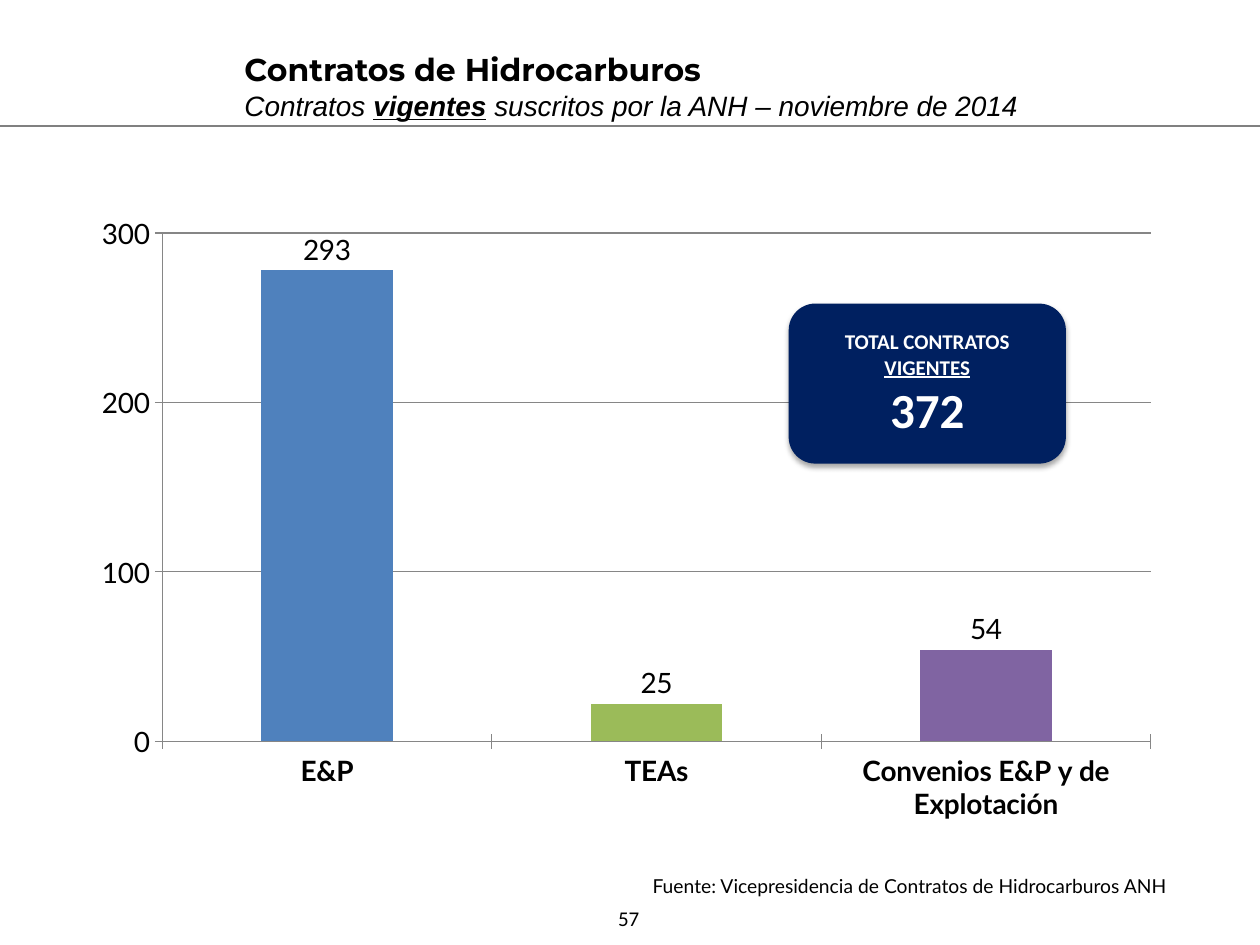
from lxml.etree import SubElement
from pptx import Presentation
from pptx.chart.data import CategoryChartData
from pptx.dml.color import RGBColor
from pptx.enum.chart import XL_CHART_TYPE, XL_LABEL_POSITION, XL_TICK_MARK
from pptx.enum.shapes import MSO_CONNECTOR, MSO_SHAPE
from pptx.enum.text import MSO_ANCHOR, MSO_AUTO_SIZE, PP_ALIGN
from pptx.oxml import parse_xml
from pptx.oxml.ns import nsdecls, qn
from pptx.util import Inches, Pt

THEME = {
    "heading": "Montserrat", "subtitle": "Arial", "body": "Calibri", "chart": "Lato",
    "ink": "000000", "white": "FFFFFF", "navy": "002060", "rule": "808080", "grid": "868686",
    "title_size": 18, "subtitle_size": 16, "chart_size": 16,
    "small": 12, "source_size": 11, "total_size": 28,
}

SUBTITLE = [("Contratos ", False), ("vigentes", True),
            (" suscritos por la ANH – noviembre de 2014", False)]
CONTRACTS = [
    ("E&P", 278, "293", "4F81BD"),
    ("TEAs", 22, "25", "9BBB59"),
    ("Convenios E&P y de Explotación", 54, None, "8064A2"),
]
PLOT = {"x": 0.076, "y": 0.071, "w": 0.906, "h": 0.776}
SOURCE = "Fuente: Vicepresidencia de Contratos de Hidrocarburos ANH"


def color(name):
    return RGBColor.from_string(THEME.get(name, name))


def style(font, face, size, ink="ink", bold=False, italic=False, underline=False):
    font.name, font.size = THEME[face], Pt(THEME[size])
    font.bold, font.italic, font.underline = bold, italic, underline
    font.color.rgb = color(ink)


def add_span(para, text, *look, **flags):
    span = para.add_run()
    span.text = text
    style(span.font, *look, **flags)


def add_rule(page):
    rule = page.shapes.add_connector(MSO_CONNECTOR.STRAIGHT, 0, Inches(1), Inches(10), Inches(1))
    rule.line.color.rgb = color("rule")
    rule.line.width = Pt(0.75)
    SubElement(rule._element.spPr, qn("a:effectLst"))


def add_title(page):
    title = page.shapes.title
    title.left, title.top, title.width, title.height = map(Inches, (1.84, 0.35, 6.46, 0.67))
    frame = title.text_frame
    frame.auto_size = MSO_AUTO_SIZE.NONE
    frame.vertical_anchor = MSO_ANCHOR.TOP
    heading, subtitle = frame.paragraphs[0], frame.add_paragraph()
    heading.alignment = subtitle.alignment = PP_ALIGN.LEFT
    add_span(heading, "Contratos de Hidrocarburos", "heading", "title_size", bold=True)
    for text, strong in SUBTITLE:
        add_span(subtitle, text, "subtitle", "subtitle_size",
                 bold=strong, italic=True, underline=strong)


def place_plot(chart):
    area = chart._chartSpace.chart.plotArea
    for old in area.findall(qn("c:layout")):
        area.remove(old)
    sizes = "".join(f'<c:{key} val="{value}"/>' for key, value in PLOT.items())
    area.insert(0, parse_xml(
        f'<c:layout {nsdecls("c")}><c:manualLayout><c:layoutTarget val="inner"/>'
        f'<c:xMode val="edge"/><c:yMode val="edge"/>{sizes}</c:manualLayout></c:layout>'))


def add_contract_chart(page):
    data = CategoryChartData()
    data.categories = [name for name, *_ in CONTRACTS]
    data.add_series("Contratos", [value for _, value, *_ in CONTRACTS])
    chart = page.shapes.add_chart(
        XL_CHART_TYPE.COLUMN_CLUSTERED, *map(Inches, (0.63, 1.48, 8.66, 5.2)), data).chart
    chart.has_legend = chart.has_title = False
    style(chart.font, "chart", "chart_size")
    place_plot(chart)

    values, categories = chart.value_axis, chart.category_axis
    values.minimum_scale, values.maximum_scale, values.major_unit = 0, 300, 100
    values.has_major_gridlines = True
    style(categories.tick_labels.font, "chart", "chart_size", bold=True)
    for axis in (values, categories):
        axis.major_tick_mark = XL_TICK_MARK.CROSS
    for part in (values, categories, values.major_gridlines):
        part.format.line.color.rgb = color("grid")
        part.format.line.width = Pt(0.75)

    plot = chart.plots[0]
    plot.gap_width = 150
    plot.vary_by_categories = False
    series = plot.series[0]
    series.format.fill.solid()
    series.format.fill.fore_color.rgb = color(CONTRACTS[0][3])
    labels = series.data_labels
    labels.show_value = True
    labels.position = XL_LABEL_POSITION.OUTSIDE_END
    style(labels.font, "chart", "chart_size")
    for index, (_, _, caption, fill) in enumerate(CONTRACTS):
        point = series.points[index]
        point.format.fill.solid()
        point.format.fill.fore_color.rgb = color(fill)
        if caption:
            para = point.data_label.text_frame.paragraphs[0]
            add_span(para, caption, "chart", "chart_size")
            point.data_label.position = XL_LABEL_POSITION.OUTSIDE_END


def add_total(page):
    box = page.shapes.add_shape(MSO_SHAPE.ROUNDED_RECTANGLE,
                                *map(Inches, (6.26, 2.41, 2.2, 1.27)))
    box.fill.solid()
    box.fill.fore_color.rgb = color("navy")
    box.line.fill.background()
    box.shadow.inherit = False
    effects = box._element.spPr.find(qn("a:effectLst"))
    effects.append(parse_xml(
        f'<a:outerShdw {nsdecls("a")} blurRad="{Pt(3.1)}" dist="{Pt(1.8)}" dir="5400000" '
        'rotWithShape="0"><a:srgbClr val="000000"><a:alpha val="35000"/></a:srgbClr>'
        '</a:outerShdw>'))
    frame = box.text_frame
    frame.word_wrap = True
    frame.vertical_anchor = MSO_ANCHOR.MIDDLE
    caption, total = frame.paragraphs[0], frame.add_paragraph()
    caption.alignment = total.alignment = PP_ALIGN.CENTER
    add_span(caption, "TOTAL CONTRATOS ", "body", "small", "white", bold=True)
    add_span(caption, "VIGENTES", "body", "small", "white", bold=True, underline=True)
    add_span(total, "372", "body", "total_size", "white", bold=True)


def add_note(page, place, text, face, size, alignment, anchor):
    frame = page.shapes.add_textbox(*map(Inches, place)).text_frame
    frame.word_wrap = True
    frame.vertical_anchor = anchor
    para = frame.paragraphs[0]
    para.alignment = alignment
    add_span(para, text, face, size)


def main():
    deck = Presentation()
    deck.slide_width, deck.slide_height = Inches(10), Inches(7.5)
    page = deck.slides.add_slide(deck.slide_layouts[5])
    add_rule(page)
    add_contract_chart(page)
    add_title(page)
    add_total(page)
    add_note(page, (4.73, 7.07, 0.52, 0.44), "57", "body", "small",
             PP_ALIGN.CENTER, MSO_ANCHOR.MIDDLE)
    add_note(page, (4.32, 6.89, 5.04, 0.29), SOURCE, "chart", "source_size",
             PP_ALIGN.RIGHT, MSO_ANCHOR.TOP)
    deck.save("out.pptx")


if __name__ == "__main__":
    main()
